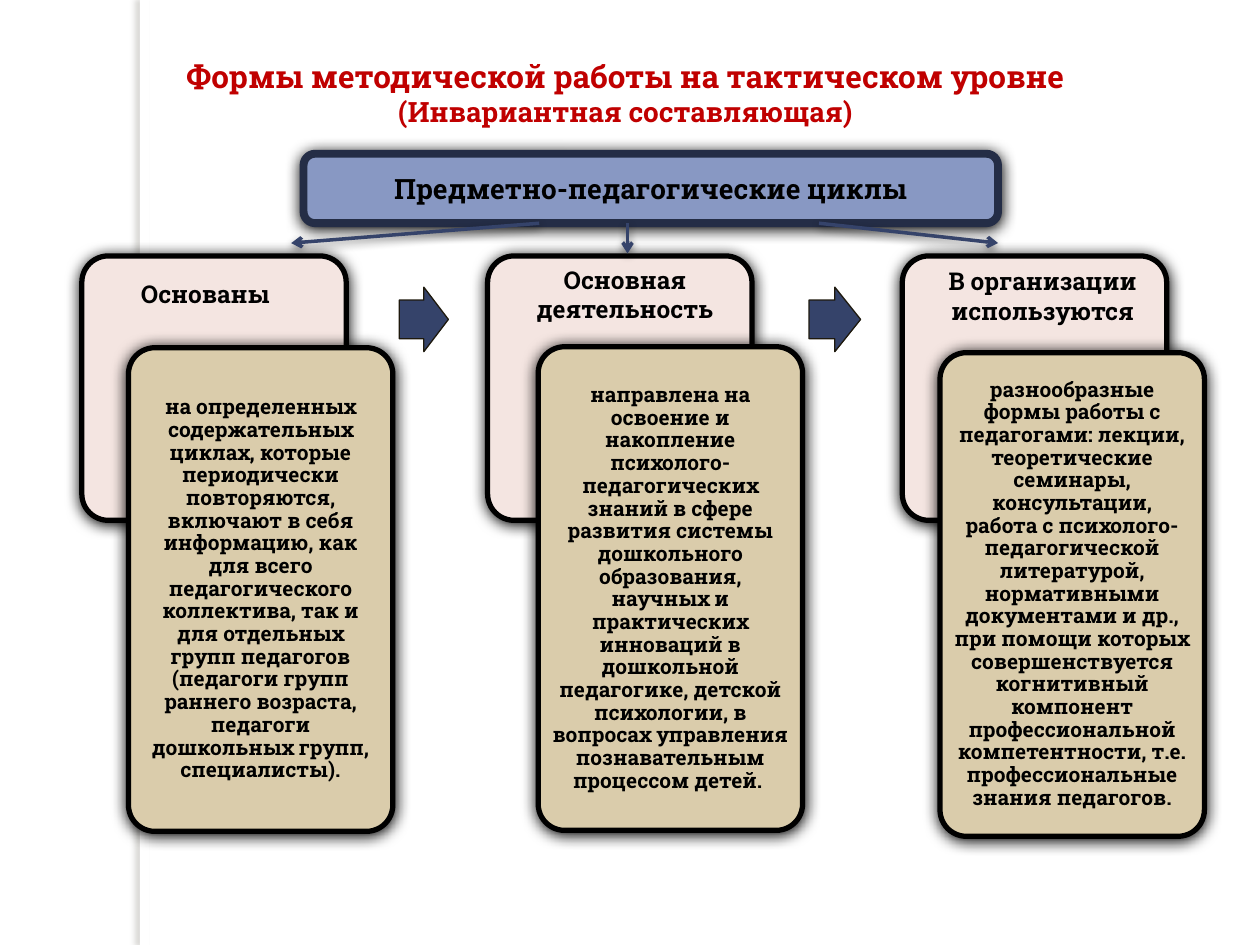
from dataclasses import dataclass

from lxml import etree
from pptx import Presentation
from pptx.dml.color import RGBColor
from pptx.enum.shapes import MSO_CONNECTOR, MSO_SHAPE
from pptx.enum.text import MSO_ANCHOR, PP_ALIGN
from pptx.oxml.ns import qn
from pptx.util import Cm, Pt

RECT = MSO_SHAPE.RECTANGLE
ROUNDED = MSO_SHAPE.ROUNDED_RECTANGLE
RIGHT_ARROW = MSO_SHAPE.RIGHT_ARROW
STRAIGHT = MSO_CONNECTOR.STRAIGHT
TOP, MIDDLE = MSO_ANCHOR.TOP, MSO_ANCHOR.MIDDLE
CENTER = PP_ALIGN.CENTER


@dataclass(frozen=True)
class Theme:
    font: str = "Roboto Slab"
    title: str = "C00000"
    text: str = "000000"
    paper: str = "FFFFFF"
    cycle_fill: str = "8898C3"
    cycle_line: str = "242D46"
    back_card: str = "F4E5E1"
    front_card: str = "DACCAB"
    card_line: str = "000000"
    arrow: str = "35436A"
    arrow_line: str = "1E190D"
    title_size: int = 18
    subtitle_size: int = 16
    heading_size: int = 14
    body_size: int = 12
    # Shadows: colour, opacity %, blur pt, distance pt, direction in degrees
    strip_shadow: tuple = ("736F63", 25, 3, 3, 180)
    box_shadow: tuple = ("000000", 100, 8.5, 1, 90)
    link_shadow: tuple = ("000000", 43, 5, 2, 90)


class SlideBuilder:
    """Holds the theme and the current slide; one method per kind of element."""

    def __init__(self, slide, theme):
        self.slide = slide
        self.theme = theme

    def style_font(self, font, size, color):
        font.name = self.theme.font
        font.size = Pt(size)
        font.bold = True
        font.color.rgb = RGBColor.from_string(color)

    def cast_shadow(self, element, shadow):
        """Replace the theme effects of a shape or connector with one outer shadow."""
        color, opacity, blur, distance, direction = shadow
        properties = element._element.spPr
        effects = properties.find(qn("a:effectLst"))
        if effects is None:
            effects = etree.SubElement(properties, qn("a:effectLst"))
        outer = etree.SubElement(
            effects, qn("a:outerShdw"), blurRad=str(Pt(blur)), dist=str(Pt(distance)),
            dir=str(direction * 60000), algn="ctr", rotWithShape="0")
        tint = etree.SubElement(outer, qn("a:srgbClr"), val=color)
        etree.SubElement(tint, qn("a:alpha"), val=str(opacity * 1000))

    def set_text(self, frame, text, size, spacing=None):
        frame.word_wrap = True
        paragraph = frame.paragraphs[0]
        paragraph.text = text
        paragraph.alignment = CENTER
        paragraph.line_spacing = spacing
        self.style_font(paragraph.font, size, self.theme.text)

    def title(self, box, lead, detail):
        placeholder = self.slide.shapes.title
        (placeholder.left, placeholder.top,
         placeholder.width, placeholder.height) = map(Cm, box)
        frame = placeholder.text_frame
        frame.word_wrap = True
        frame.vertical_anchor = TOP
        paragraph = frame.paragraphs[0]
        paragraph.alignment = CENTER
        for text, size in ((lead, self.theme.title_size),
                           (detail, self.theme.subtitle_size)):
            run = paragraph.add_run()
            run.text = text
            self.style_font(run.font, size, self.theme.title)

    def shape(self, kind, box, fill, line=None, width=0, adjust=(), shadow=None):
        shape = self.slide.shapes.add_shape(kind, *map(Cm, box))
        for index, value in enumerate(adjust):
            shape.adjustments[index] = value
        shape.fill.solid()
        shape.fill.fore_color.rgb = RGBColor.from_string(fill)
        if line:
            shape.line.color.rgb = RGBColor.from_string(line)
            shape.line.width = Pt(width)
        else:
            shape.line.fill.background()
        shape.shadow.inherit = False
        if shadow:
            self.cast_shadow(shape, shadow)
        return shape

    def card(self, box, fill):
        return self.shape(ROUNDED, box, fill, self.theme.card_line, 3, (0.1,),
                          self.theme.box_shadow)

    def body_card(self, box, text):
        frame = self.card(box, self.theme.front_card).text_frame
        frame.margin_left = frame.margin_right = Cm(0.13)
        frame.margin_top = frame.margin_bottom = Cm(0.13)
        frame.vertical_anchor = MIDDLE
        self.set_text(frame, text, self.theme.body_size, 0.9)

    def heading(self, box, text):
        label = self.slide.shapes.add_textbox(*map(Cm, box))
        self.set_text(label.text_frame, text, self.theme.heading_size)

    def block_arrow(self, box):
        self.shape(RIGHT_ARROW, box, self.theme.arrow, self.theme.arrow_line, 0.75,
                   (0.6, 0.5))

    def link(self, start, end):
        link = self.slide.shapes.add_connector(STRAIGHT, *map(Cm, start + end))
        link.line.color.rgb = RGBColor.from_string(self.theme.arrow)
        link.line.width = Pt(2)
        outline = link._element.spPr.find(qn("a:ln"))
        etree.SubElement(outline, qn("a:tailEnd"), type="arrow")
        self.cast_shadow(link, self.theme.link_shadow)


# Heading, its box, left of the back card, corner of the front card, body text
COLUMNS = (
    ("Основаны", (2.31, 5.51, 3.66, 0.86), 1.65, (2.59, 7.01),
     "на определенных содержательных циклах, которые периодически повторяются, "
     "включают в себя информацию, как для всего педагогического коллектива, так и "
     "для отдельных групп педагогов (педагоги групп раннего возраста, педагоги "
     "дошкольных групп, специалисты)."),
    ("Основная деятельность", (10.44, 5.21, 4.32, 1.45), 9.83, (10.85, 6.99),
     "направлена на освоение и накопление психолого-педагогических знаний в сфере "
     "развития системы дошкольного образования, научных и практических инноваций в "
     "дошкольной педагогике, детской психологии, в вопросах управления "
     "познавательным процессом детей. "),
    ("В организации используются", (18.72, 5.24, 4.6, 1.45), 18.19, (18.95, 7.11),
     "разнообразные формы работы с педагогами: лекции, теоретические семинары, "
     "консультации, работа с психолого-педагогической литературой, нормативными "
     "документами и др., при помощи которых совершенствуется когнитивный компонент "
     "профессиональной компетентности, т.е. профессиональные знания педагогов."),
)
CARD_WIDTH = 5.33
BACK_TOP, BACK_HEIGHT = 5.16, 5.33
FRONT_HEIGHT = 9.75
CYCLE_BOTTOM = 4.5
STEP_ARROWS = ((8.05, 0.99), (16.31, 1.04))
LINKS = ((10.87, (5.87, 4.9)), (12.65, (12.65, 5.11)), (16.51, (20.12, 4.9)))


def main():
    presentation = Presentation()
    presentation.slide_width, presentation.slide_height = Cm(25.4), Cm(19.05)
    theme = Theme()
    slide = presentation.slides.add_slide(presentation.slide_layouts[5])
    builder = SlideBuilder(slide, theme)

    builder.shape(RECT, (2.82, 0, 0.2, 19.05), theme.paper, shadow=theme.strip_shadow)
    builder.title((2.31, 1.02, 20.6, 1.7),
                  "Формы методической работы на тактическом уровне ",
                  "(Инвариантная составляющая)")

    for heading, heading_box, back_left, front_corner, body in COLUMNS:
        builder.card((back_left, BACK_TOP, CARD_WIDTH, BACK_HEIGHT), theme.back_card)
        builder.body_card((*front_corner, CARD_WIDTH, FRONT_HEIGHT), body)
        builder.heading(heading_box, heading)
    for left, width in STEP_ARROWS:
        builder.block_arrow((left, 5.79, width, 1.3))

    cycle = builder.shape(ROUNDED, (6.12, 3.1, 14, 1.4), theme.cycle_fill,
                          theme.cycle_line, 4.5, shadow=theme.box_shadow)
    builder.set_text(cycle.text_frame, "Предметно-педагогические циклы",
                     theme.subtitle_size)
    for start_x, end in LINKS:
        builder.link((start_x, CYCLE_BOTTOM), end)

    presentation.save("out.pptx")


if __name__ == "__main__":
    main()
